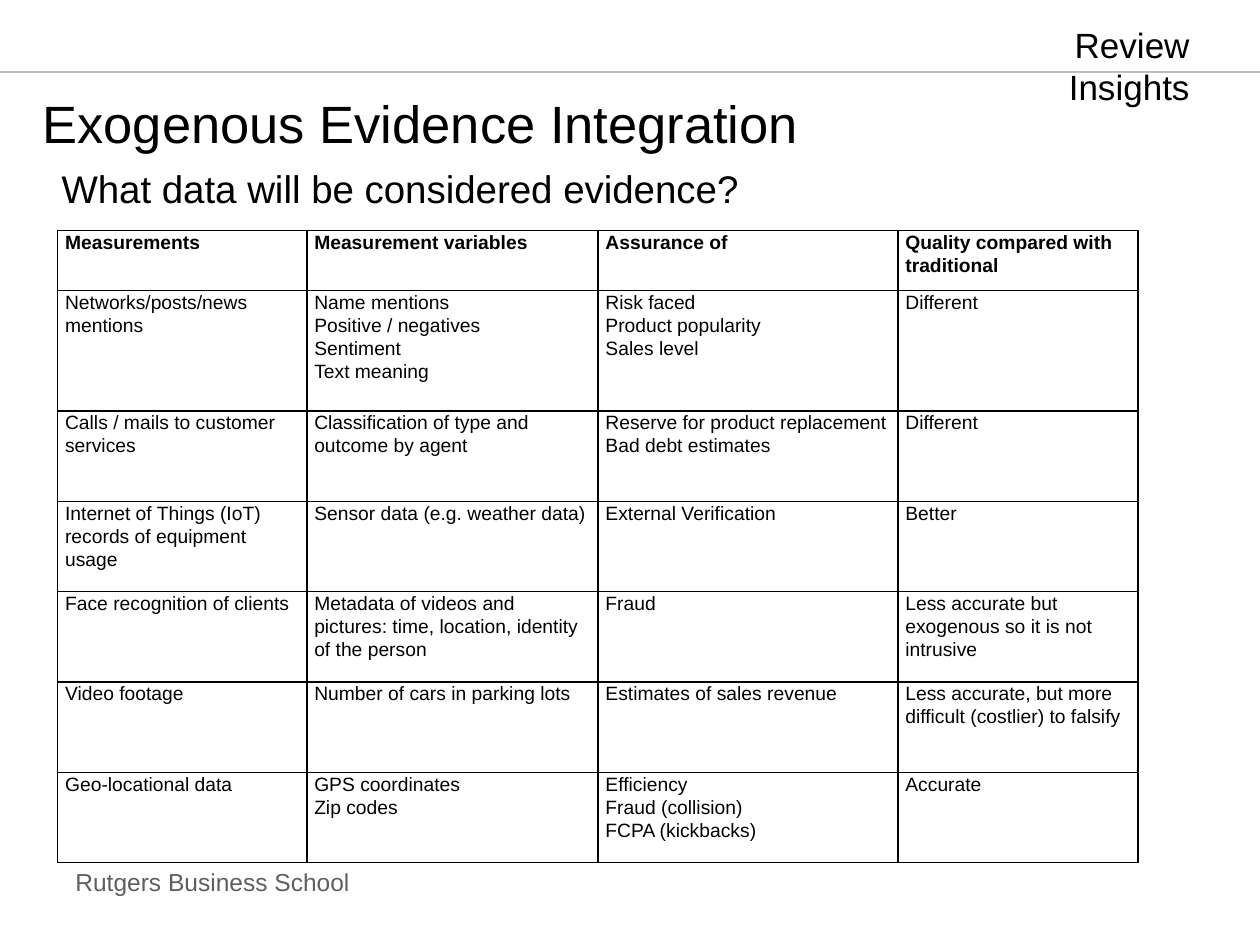
from dataclasses import dataclass

from lxml.etree import SubElement as Sub
from pptx import Presentation
from pptx.dml.color import RGBColor as Rgb
from pptx.enum.shapes import MSO_CONNECTOR as Link
from pptx.enum.text import MSO_ANCHOR as Anchor, PP_ALIGN as Align
from pptx.oxml.ns import qn
from pptx.util import Pt


@dataclass(frozen=True)
class Theme:
    face: str = "Arial"
    ink: str = "000000"
    gray: str = "5F5F5F"
    rule: str = "BFBFBF"
    title: float = 30
    lead: float = 22
    brand: float = 20
    foot: float = 14
    cell: float = 11


@dataclass(frozen=True)
class Label:
    text: str
    box: tuple[float, float, float, float]
    size: float
    color: str
    align: Align = Align.LEFT
    anchor: Anchor = Anchor.TOP
    inset: tuple[float, float] = (7.2, 3.6)
    wrap: bool = True


THEME = Theme()

LABELS = [
    Label("Rutgers Business School", (36, 491.8, 180, 23.8), THEME.foot, THEME.gray),
    Label("Review Insights", (540.7, 10, 146.2, 55.4), THEME.brand, THEME.ink,
          align=Align.RIGHT, wrap=False),
    Label("Exogenous Evidence Integration", (17.3, 38.2, 648, 63.4), THEME.title,
          THEME.ink, anchor=Anchor.MIDDLE),
    Label("What data will be considered evidence?", (30.2, 91.4, 486, 278.6),
          THEME.lead, THEME.ink, inset=(5, 2.9)),
]

ROWS = [
    ("Measurements", "Measurement variables", "Assurance of",
     "Quality compared with traditional"),
    ("Networks/posts/news mentions",
     "Name mentions\nPositive / negatives\nSentiment\nText meaning",
     "Risk faced\nProduct popularity\nSales level", "Different"),
    ("Calls / mails to customer services",
     "Classification of type and outcome by agent",
     "Reserve for product replacement\nBad debt estimates", "Different"),
    ("Internet of Things (IoT) records of equipment usage",
     "Sensor data (e.g. weather data)", "External Verification", "Better"),
    ("Face recognition of clients",
     "Metadata of videos and pictures: time, location, identity of the person",
     "Fraud", "Less accurate but exogenous so it is not intrusive"),
    ("Video footage", "Number of cars in parking lots",
     "Estimates of sales revenue",
     "Less accurate, but more difficult (costlier) to falsify"),
    ("Geo-locational data", "GPS coordinates\nZip codes",
     "Efficiency\nFraud (collision)\nFCPA (kickbacks)", "Accurate"),
]
WIDTHS = (142.4, 166.4, 171.4, 137.3)
LINES = (2, 4, 3, 3, 3, 3, 3)
PITCH = 17.21


def apply(target, values: dict) -> None:
    for name, value in values.items():
        setattr(target, name, value)


def style(para, size: float, color: str, bold: bool = False) -> None:
    apply(para.font, {"name": THEME.face, "size": Pt(size), "bold": bold})
    para.font.color.rgb = Rgb.from_string(color)


def write(slide, label: Label) -> None:
    frame = slide.shapes.add_textbox(*map(Pt, label.box)).text_frame
    side, top = map(Pt, label.inset)
    apply(frame, {
        "text": label.text, "word_wrap": label.wrap,
        "vertical_anchor": label.anchor,
        "margin_left": side, "margin_right": side,
        "margin_top": top, "margin_bottom": top,
    })
    para = frame.paragraphs[0]
    para.alignment = label.align
    style(para, label.size, label.color)


def rule(slide) -> None:
    """Draw the thin line under the page header."""
    ends = map(Pt, (0, 41.2, 720, 41.2))
    line = slide.shapes.add_connector(Link.STRAIGHT, *ends)
    line.line.width = Pt(0.75)
    line.line.color.rgb = Rgb.from_string(THEME.rule)
    Sub(line._element.spPr, qn("a:effectLst"))


def frame_cell(cell) -> None:
    """Give a cell its four black borders."""
    props = cell._tc.get_or_add_tcPr()
    for side in ("lnL", "lnR", "lnT", "lnB"):
        edge = Sub(props, qn(f"a:{side}"), w=str(Pt(1)))
        fill = Sub(edge, qn("a:solidFill"))
        Sub(fill, qn("a:srgbClr"), val=THEME.ink)


def fill_cell(cell, text: str, bold: bool) -> None:
    apply(cell, {
        "text": text, "vertical_anchor": Anchor.TOP,
        "margin_left": Pt(4.3), "margin_right": Pt(4.3),
        "margin_top": 0, "margin_bottom": 0,
    })
    frame_cell(cell)
    cell.fill.background()
    for para in cell.text_frame.paragraphs:
        para.line_spacing = 1.07
        style(para, THEME.cell, THEME.ink, bold)


def draw_table(slide) -> None:
    box = map(Pt, (32.9, 131.6, sum(WIDTHS), PITCH * sum(LINES)))
    table = slide.shapes.add_table(len(ROWS), len(WIDTHS), *box).table
    apply(table, {"first_row": False, "horz_banding": False})
    for col, width in zip(table.columns, WIDTHS):
        col.width = Pt(width)
    for row, count in zip(table.rows, LINES):
        row.height = Pt(PITCH * count)
    for r, texts in enumerate(ROWS):
        for c, text in enumerate(texts):
            fill_cell(table.cell(r, c), text, bold=r == 0)


def main() -> None:
    deck = Presentation()
    apply(deck, {"slide_width": Pt(720), "slide_height": Pt(540)})
    slide = deck.slides.add_slide(deck.slide_layouts[6])
    foot, brand, title, lead = LABELS
    write(slide, foot)
    write(slide, brand)
    rule(slide)
    write(slide, title)
    draw_table(slide)
    write(slide, lead)
    deck.save("out.pptx")


if __name__ == "__main__":
    main()
